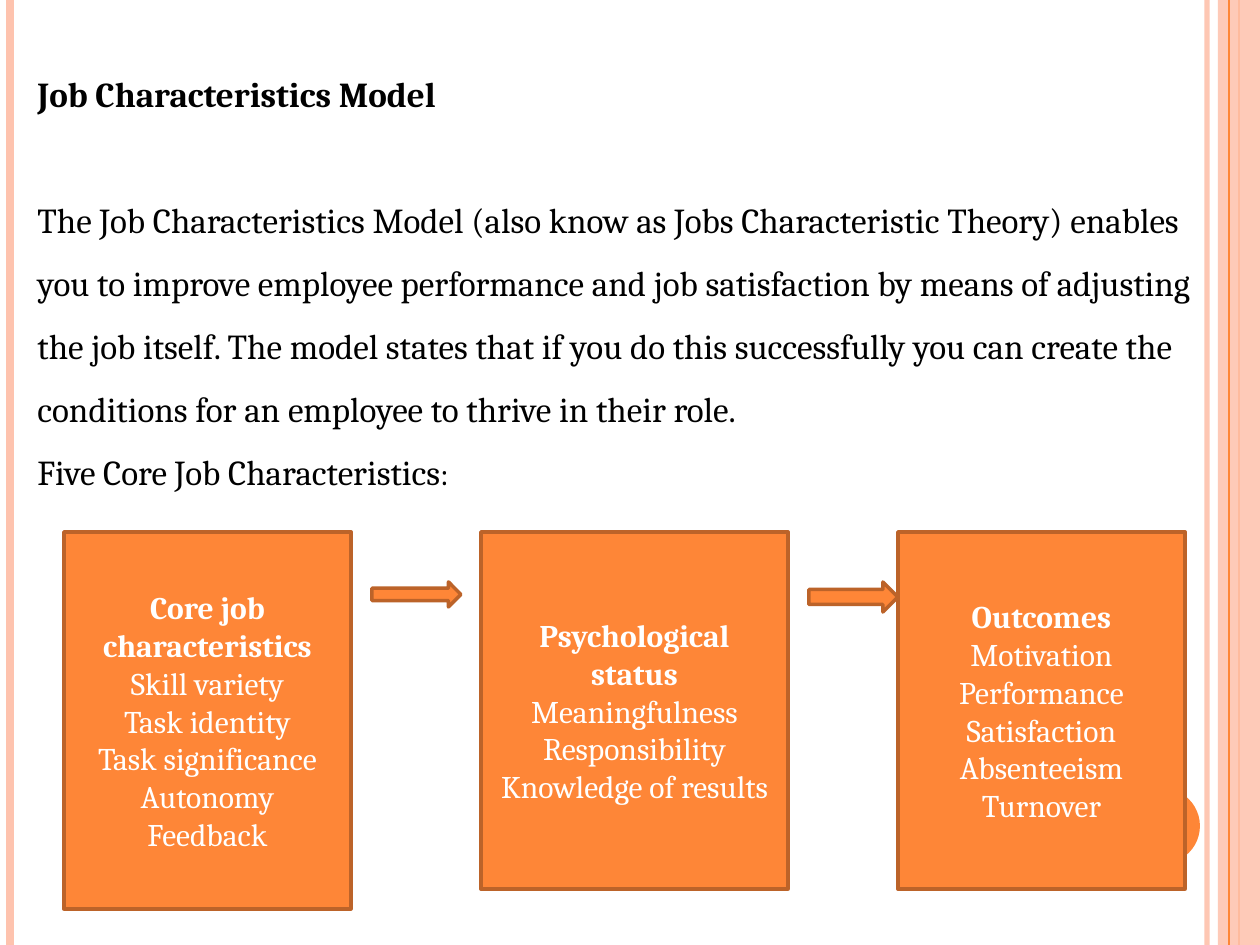
from dataclasses import dataclass
from typing import Any, NamedTuple

from lxml.etree import SubElement as Sub
from pptx import Presentation
from pptx.dml.color import RGBColor as RGB
from pptx.enum.shapes import MSO_CONNECTOR as Link, MSO_SHAPE as Kind
from pptx.enum.text import MSO_ANCHOR as Anchor, PP_ALIGN as Align
from pptx.oxml.ns import qn
from pptx.util import Emu, Pt

SCALE = 914400 / 126
WIDE, HIGH = 1260, 945


@dataclass(frozen=True)
class Theme:
    font: str = "Cambria"
    ink: str = "000000"
    light: str = "FFFFFF"
    pale: str = "FEC3AE"
    fill: str = "FE8637"
    edge: str = "BC6329"
    stroke: int = 2
    body: int = 20
    small: int = 18
    gap: int = 36


class Rule(NamedTuple):
    x: int
    width: float
    color: str
    alpha: int = 100


class Area(NamedTuple):
    x: int
    y: int
    w: int
    h: int


class Card(NamedTuple):
    w: int
    h: int
    head: str
    items: list[str]


THEME = Theme()
RULES = [
    Rule(1207, 3, THEME.pale, 93),
    Rule(10, 4.5, THEME.pale),
    Rule(1239, 1.5, THEME.fill),
    Rule(1229, 0.75, THEME.fill),
]
BAND = Area(1218, 0, 42, HIGH)
DISC = Area(1124, 788, 76, 76)
PROSE = Area(25, 45, 1191, 1221)
LEFT, TOP, STEP = 64, 532, 417
CARDS = [
    Card(287, 377, "Core job characteristics",
         ["Skill variety", "Task identity", "Task significance", "Autonomy", "Feedback"]),
    Card(307, 357, "Psychological status",
         ["Meaningfulness", "Responsibility", "Knowledge of results"]),
    Card(287, 357, "Outcomes",
         ["Motivation", "Performance", "Satisfaction", "Absenteeism", "Turnover"]),
]
ARROWS = [Area(372, 582, 89, 25), Area(809, 582, 89, 30)]
TITLE = "Job Characteristics Model"
BODY = (
    "The Job Characteristics Model (also know as Jobs Characteristic Theory) enables "
    "you to improve employee performance and job satisfaction by means of adjusting "
    "the job itself. The model states that if you do this successfully you can create "
    "the conditions for an employee to thrive in their role."
)
LEAD = "Five Core Job Characteristics"


def px(*values: int) -> list[Emu]:
    return [Emu(round(value * SCALE)) for value in values]


def apply(target: Any, **formats: Any) -> None:
    for name, value in formats.items():
        setattr(target, name, value)


def fade(part: Any, alpha: int) -> None:
    """Make the first solid colour inside an XML part see-through."""
    if alpha < 100:
        color = next(part.iter(qn("a:srgbClr")))
        Sub(color, qn("a:alpha"), val=str(alpha * 1000))


def add_run(para: Any, text: str, size: int, color: str, bold: bool = False) -> None:
    run = para.add_run()
    run.text = text
    apply(run.font, name=THEME.font, size=Pt(size), bold=bold)
    run.font.color.rgb = RGB.from_string(color)


def add_para(frame: Any, first: bool, **formats: Any) -> Any:
    para = frame.paragraphs[0] if first else frame.add_paragraph()
    apply(para, **formats)
    return para


def draw_rule(slide: Any, rule: Rule) -> None:
    line = slide.shapes.add_connector(Link.STRAIGHT, *px(rule.x, 0, rule.x, HIGH))
    line.line.width = Pt(rule.width)
    line.line.color.rgb = RGB.from_string(rule.color)
    props = line._element.spPr
    fade(props, rule.alpha)
    Sub(props, qn("a:effectLst"))


def draw_shape(slide: Any, kind: Kind, area: Area, fill: str, edge: str = "") -> Any:
    shape = slide.shapes.add_shape(kind, *px(*area))
    shape.shadow.inherit = False
    shape.fill.solid()
    shape.fill.fore_color.rgb = RGB.from_string(fill)
    if edge:
        shape.line.width = Pt(THEME.stroke)
        shape.line.color.rgb = RGB.from_string(edge)
    else:
        shape.line.fill.background()
    return shape


def draw_prose(slide: Any) -> None:
    frame = slide.shapes.add_textbox(*px(*PROSE)).text_frame
    frame.word_wrap = True
    for text in (TITLE, BODY, LEAD):
        first = text == TITLE
        para = add_para(frame, first, line_spacing=1.5,
                        space_after=Pt(THEME.gap if first else 0))
        add_run(para, text, THEME.body, THEME.ink, first)
    add_run(para, ":", THEME.small, THEME.ink)


def draw_card(slide: Any, card: Card, x: int) -> None:
    area = Area(x, TOP, card.w, card.h)
    frame = draw_shape(slide, Kind.RECTANGLE, area, THEME.fill, THEME.edge).text_frame
    apply(frame, word_wrap=True, vertical_anchor=Anchor.MIDDLE)
    for row, text in enumerate([card.head, *card.items]):
        para = add_para(frame, row == 0, alignment=Align.CENTER)
        add_run(para, text, THEME.small, THEME.light, row == 0)


def main() -> None:
    deck = Presentation()
    deck.slide_width, deck.slide_height = px(WIDE, HIGH)
    slide = deck.slides.add_slide(deck.slide_layouts[6])
    for rule in RULES[:3]:
        draw_rule(slide, rule)
    band = draw_shape(slide, Kind.RECTANGLE, BAND, THEME.pale)
    fade(band._element.spPr, 87)
    draw_rule(slide, RULES[3])
    draw_shape(slide, Kind.OVAL, DISC, THEME.fill)
    draw_prose(slide)
    for col, card in enumerate(CARDS):
        draw_card(slide, card, LEFT + col * STEP)
    for area in ARROWS:
        draw_shape(slide, Kind.RIGHT_ARROW, area, THEME.fill, THEME.edge)
    deck.save("out.pptx")


if __name__ == "__main__":
    main()
